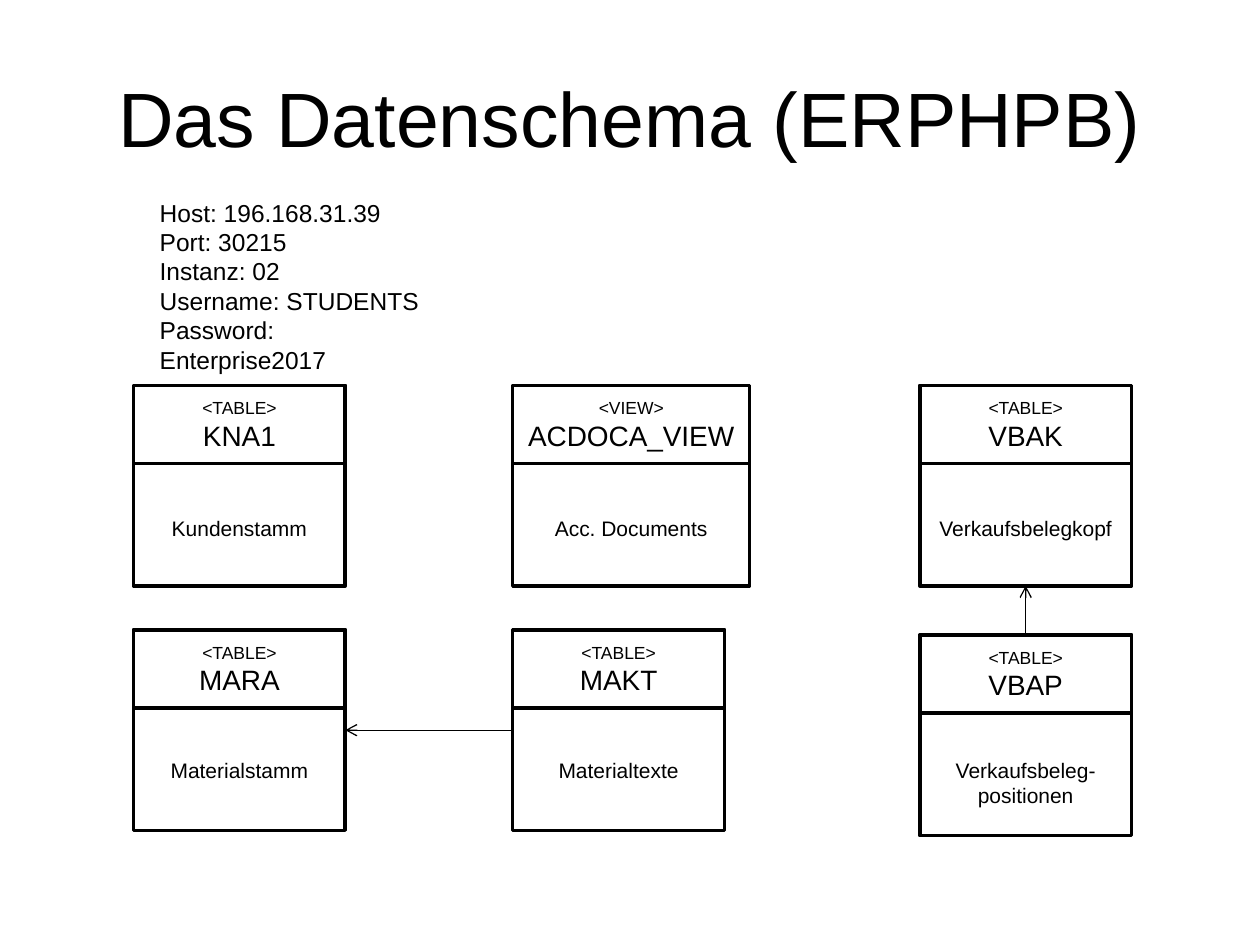
from lxml.etree import SubElement
from pptx import Presentation
from pptx.dml.color import RGBColor
from pptx.enum.shapes import MSO_CONNECTOR, MSO_SHAPE
from pptx.enum.text import MSO_ANCHOR, PP_ALIGN
from pptx.oxml.ns import qn
from pptx.util import Pt

TITLE = "Das Datenschema (ERPHPB)"
ACCESS = ["Host: 196.168.31.39", "Port: 30215", "Instanz: 02",
          "Username: STUDENTS", "Password: Enterprise2017"]
ENTITIES = [
    ("KNA1", "<TABLE>", "Kundenstamm", 0, 0),
    ("ACDOCA_VIEW", "<VIEW>", "Acc. Documents", 1, 0),
    ("MARA", "<TABLE>", "Materialstamm", 0, 1),
    ("MAKT", "<TABLE>", "Materialtexte", 1, 1),
    ("VBAK", "<TABLE>", "Verkaufsbelegkopf", 2, 0),
    ("VBAP", "<TABLE>", "Verkaufsbeleg-positionen", 2, 1),
]
LINKS = [("VBAP", 0, "VBAK", 2), ("MAKT", 1, "MARA", 3)]

BLACK = RGBColor(0, 0, 0)
WHITE = RGBColor(255, 255, 255)
COLUMNS = [76.3, 293, 525.6]
ROWS = [220.3, 360]
LABEL_ROWS = [290.9, 429.1]
WIDTH, HEIGHT, HEADER = 121, 114.5, 44.6
SPECIAL_WIDTHS = {"ACDOCA_VIEW": 135.4}
SPECIAL_TOPS = {"VBAP": 363}


def write(tf, lines, align, anchor=MSO_ANCHOR.TOP):
    tf.word_wrap = True
    tf.vertical_anchor = anchor
    for i, (text, size) in enumerate(lines):
        p = tf.add_paragraph() if i else tf.paragraphs[0]
        p.alignment = align
        r = p.add_run()
        r.text = text
        for name, value in {"name": "Arial", "size": Pt(size)}.items():
            setattr(r.font, name, value)
        r.font.color.rgb = BLACK


def add_text(s, box, lines, align):
    sp = s.shapes.add_textbox(*map(Pt, box))
    write(sp.text_frame, lines, align)


def add_box(s, box):
    sp = s.shapes.add_shape(MSO_SHAPE.RECTANGLE, *map(Pt, box))
    sp.shadow.inherit = False
    sp.fill.solid()
    sp.fill.fore_color.rgb = WHITE
    sp.line.color.rgb = BLACK
    sp.line.width = Pt(2)
    return sp


def add_arrow(s, start, start_side, end, end_side):
    c = s.shapes.add_connector(MSO_CONNECTOR.STRAIGHT, 0, 0, 0, 0)
    c.begin_connect(start, start_side)
    c.end_connect(end, end_side)
    c.line.color.rgb = BLACK
    c.line.width = Pt(0.75)
    SubElement(c.line._get_or_add_ln(), qn("a:tailEnd"), type="arrow")
    SubElement(c._element.spPr, qn("a:effectLst"))


def main():
    prs = Presentation()
    prs.slide_width, prs.slide_height = Pt(720), Pt(540)
    s = prs.slides.add_slide(prs.slide_layouts[5])

    title = s.shapes.title
    title.left, title.top, title.width, title.height = map(Pt, (36, 21.6, 648, 90))
    write(title.text_frame, [(TITLE, 44)], PP_ALIGN.CENTER, MSO_ANCHOR.MIDDLE)
    add_text(s, (84.2, 109.4, 175.7, 92.2), [(t, 14) for t in ACCESS], PP_ALIGN.LEFT)

    bodies = {}
    for name, kind, label, col, row in ENTITIES:
        x, y = COLUMNS[col], SPECIAL_TOPS.get(name, ROWS[row])
        w = SPECIAL_WIDTHS.get(name, WIDTH)
        bodies[name] = add_box(s, (x, y, w, HEIGHT))
        header = add_box(s, (x, y, w, HEADER))
        write(header.text_frame, [(kind, 10), (name, 16)],
              PP_ALIGN.CENTER, MSO_ANCHOR.MIDDLE)
        add_text(s, (x, LABEL_ROWS[row], w, 21.8), [(label, 12)], PP_ALIGN.CENTER)

    for start, start_side, end, end_side in LINKS:
        add_arrow(s, bodies[start], start_side, bodies[end], end_side)

    prs.save("out.pptx")


if __name__ == "__main__":
    main()
